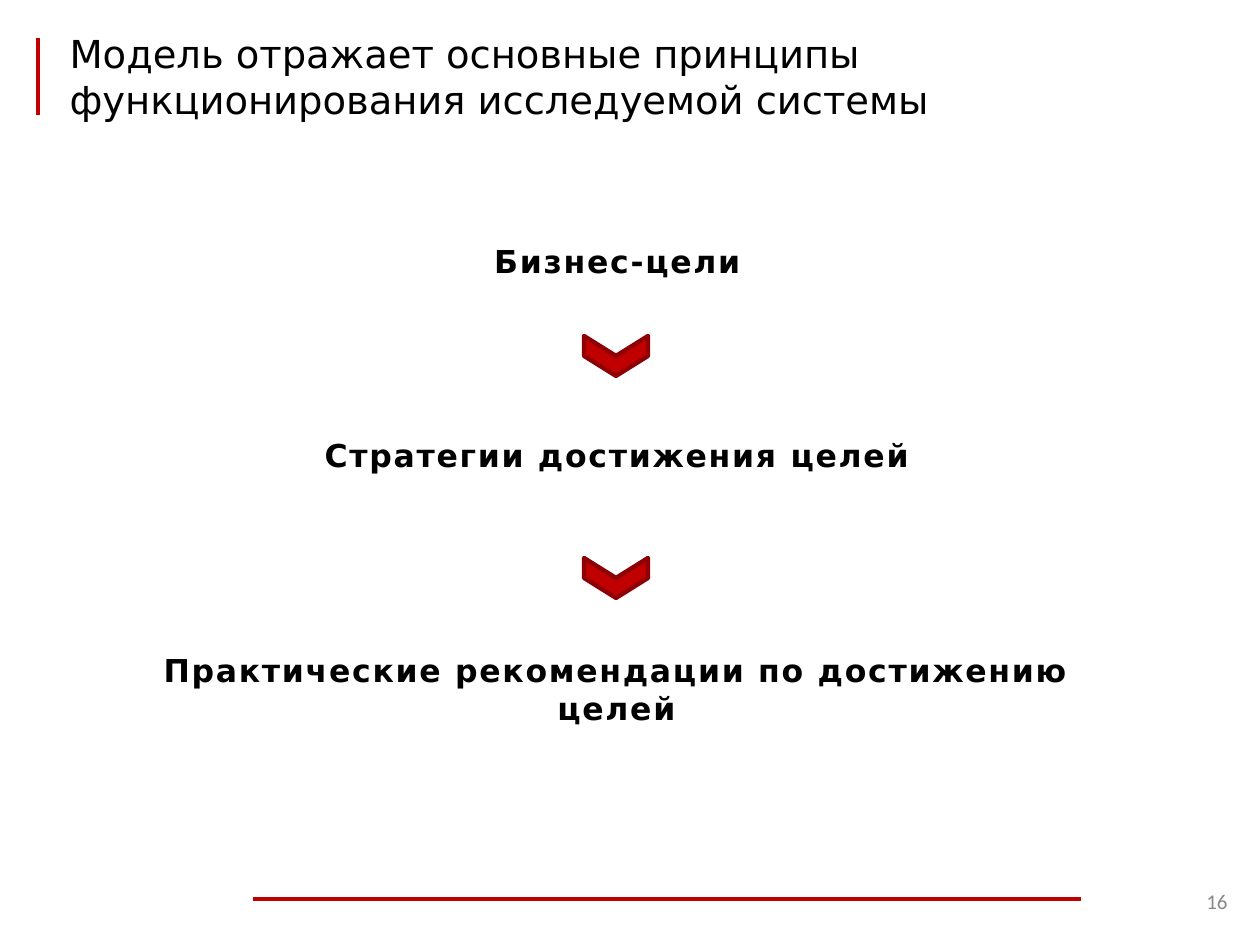
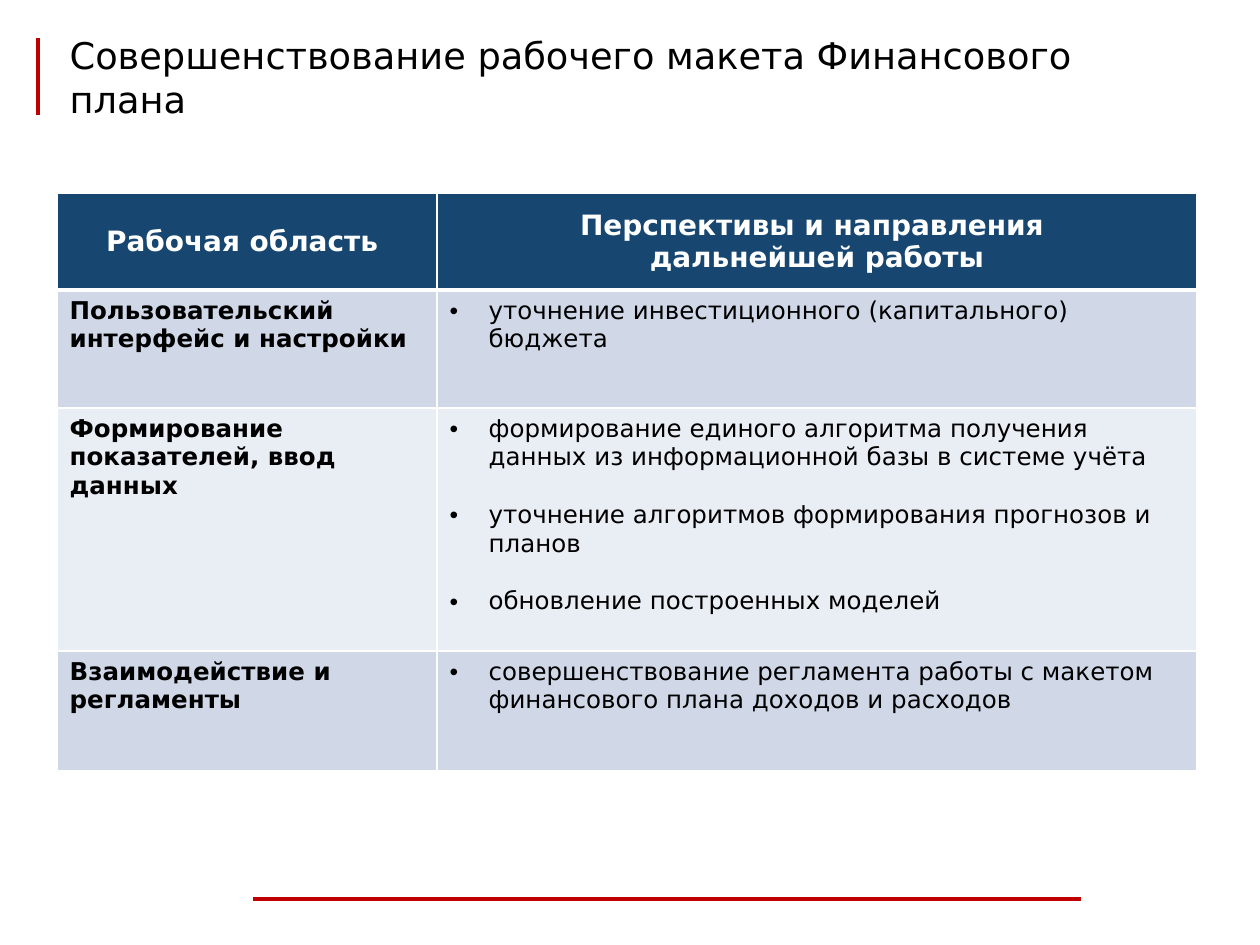
from dataclasses import dataclass

from lxml.etree import SubElement
from pptx import Presentation
from pptx.dml.color import RGBColor
from pptx.enum.shapes import MSO_CONNECTOR, MSO_SHAPE
from pptx.enum.text import MSO_ANCHOR, MSO_AUTO_SIZE, PP_ALIGN
from pptx.oxml.ns import qn
from pptx.util import Emu, Pt

# Shared look
SCALE = 914400 / 126
FONT = "DejaVu Sans"
RED, EDGE = "C00000", "8F0006"
BLACK, WHITE, GREY = "000000", "FFFFFF", "898989"
NAVY, BANDS = "174671", ("D0D8E8", "E9EDF4")


@dataclass
class Box:
    left: int
    top: int
    width: int
    height: int

    def emu(self) -> list[Emu]:
        return [px(n) for n in (self.left, self.top, self.width, self.height)]


@dataclass
class Style:
    size: float
    color: str = BLACK
    bold: bool = False
    font: str = FONT
    track: int = 0


@dataclass
class Step:
    text: str
    box: Box


@dataclass
class Row:
    area: str
    tasks: list[str]
    height: int


def px(count: int) -> Emu:
    return Emu(round(count * SCALE))


def color(code: str) -> RGBColor:
    return RGBColor.from_string(code)


# Text
def add_run(para, text: str, style: Style) -> None:
    run = para.add_run()
    run.text = text
    font = run.font
    font.name, font.size, font.bold = style.font, Pt(style.size), style.bold
    font.color.rgb = color(style.color)
    if style.track:
        font._element.set("spc", str(style.track * 100))


def fill_text(frame, lines: list[str], style: Style, align=PP_ALIGN.LEFT,
              gap: float = 0, bullet: bool = False) -> None:
    for i, line in enumerate(lines):
        para = frame.add_paragraph() if i else frame.paragraphs[0]
        para.alignment = align
        if i and gap:
            para.space_before = Pt(gap)
        if bullet:
            add_bullet(para)
        add_run(para, line, style)


def add_bullet(para) -> None:
    props = para._p.get_or_add_pPr()
    props.set("marL", str(px(39)))
    props.set("indent", str(-px(39)))
    SubElement(props, qn("a:buFont"), typeface="Arial")
    SubElement(props, qn("a:buChar"), char="•")


def add_label(slide, box: Box, text: str, style: Style, align, anchor) -> None:
    frame = slide.shapes.add_textbox(*box.emu()).text_frame
    frame.word_wrap = True
    frame.vertical_anchor = anchor
    fill_text(frame, [text], style, align)


# Frame of every slide
def add_rule(slide, x1: int, y1: int, x2: int, y2: int) -> None:
    ends = [px(n) for n in (x1, y1, x2, y2)]
    rule = slide.shapes.add_connector(MSO_CONNECTOR.STRAIGHT, *ends)
    rule.line.color.rgb = color(RED)
    rule.line.width = Pt(2.25)
    SubElement(rule._element.spPr, qn("a:effectLst"))


def add_slide(deck, title: str, size: int):
    slide = deck.slides.add_slide(deck.slide_layouts[5])
    add_rule(slide, 253, 899, 1081, 899)
    add_rule(slide, 38, 38, 38, 115)
    head = slide.shapes.title
    head.left, head.top, head.width, head.height = Box(57, 38, 1140, 77).emu()
    frame = head.text_frame
    frame.word_wrap = True
    frame.auto_size = MSO_AUTO_SIZE.NONE
    frame.vertical_anchor = MSO_ANCHOR.MIDDLE
    fill_text(frame, [title], Style(size))
    return slide


# Chain of steps
def add_arrow(slide, box: Box) -> None:
    arrow = slide.shapes.add_shape(MSO_SHAPE.CHEVRON, *box.emu())
    arrow.rotation = 90
    arrow.shadow.inherit = False
    arrow.fill.solid()
    arrow.fill.fore_color.rgb = color(RED)
    arrow.line.color.rgb = color(EDGE)
    arrow.line.width = Pt(2.5)


def draw_model(deck) -> None:
    slide = add_slide(deck, "Модель отражает основные принципы "
                      "функционирования исследуемой системы", 22)
    steps = [
        Step("Бизнес-цели", Box(333, 236, 569, 51)),
        Step("Стратегии достижения целей", Box(238, 430, 758, 51)),
        Step("Практические рекомендации по достижению целей",
             Box(112, 645, 1009, 90)),
    ]
    for step in steps:
        add_label(slide, step.box, step.text, Style(18, bold=True, track=1),
                  PP_ALIGN.CENTER, MSO_ANCHOR.TOP)
    for top in (324, 546):
        add_arrow(slide, Box(596, top, 40, 64))
    add_label(slide, Box(1182, 876, 58, 50), "16",
              Style(12, GREY, font="Calibri"), PP_ALIGN.RIGHT, MSO_ANCHOR.MIDDLE)


# Table of plans
def add_edge(cell, side: str, width: float) -> None:
    props = cell._tc.get_or_add_tcPr()
    edge = SubElement(props, qn(f"a:ln{side}"), w=str(Pt(width)))
    paint = SubElement(edge, qn("a:solidFill"))
    SubElement(paint, qn("a:srgbClr"), val=WHITE)


def paint_cell(cell, back: str, top: float, base: float) -> None:
    for side, width in (("L", 1), ("R", 1), ("T", top), ("B", base)):
        add_edge(cell, side, width)
    cell.fill.solid()
    cell.fill.fore_color.rgb = color(back)


def draw_plan(deck) -> None:
    slide = add_slide(
        deck, "Совершенствование рабочего макета Финансового плана", 21)
    heads = [["Рабочая область "],
             ["Перспективы и направления ", "дальнейшей работы"]]
    rows = [
        Row("Пользовательский интерфейс и настройки",
            ["уточнение инвестиционного (капитального) бюджета"], 118),
        Row("Формирование показателей, ввод данных",
            ["формирование единого алгоритма получения данных "
             "из информационной базы в системе учёта",
             "уточнение алгоритмов формирования прогнозов и планов",
             "обновление построенных моделей"], 243),
        Row("Взаимодействие и регламенты",
            ["совершенствование регламента работы с макетом "
             "финансового плана доходов и расходов"], 120),
    ]
    sizes = [97] + [row.height for row in rows]
    box = Box(57, 193, 1140, sum(sizes))
    grid = slide.shapes.add_table(len(sizes), 2, *box.emu()).table
    grid.horz_banding = False
    for col, width in zip(grid.columns, (380, 760)):
        col.width = px(width)
    for line, size in zip(grid.rows, sizes):
        line.height = px(size)

    for i, lines in enumerate(heads):
        cell = grid.cell(0, i)
        paint_cell(cell, NAVY, 1, 3)
        cell.vertical_anchor = MSO_ANCHOR.MIDDLE
        fill_text(cell.text_frame, lines, Style(16, WHITE, True),
                  PP_ALIGN.CENTER)
    for i, row in enumerate(rows):
        area, tasks = grid.cell(i + 1, 0), grid.cell(i + 1, 1)
        for cell in (area, tasks):
            paint_cell(cell, BANDS[i % 2], 1 if i else 3, 1)
        fill_text(area.text_frame, [row.area], Style(14, bold=True))
        fill_text(tasks.text_frame, row.tasks, Style(14), gap=16.5, bullet=True)


def main() -> None:
    deck = Presentation()
    deck.slide_width, deck.slide_height = px(1260), px(945)
    draw_model(deck)
    draw_plan(deck)
    deck.save("out.pptx")


if __name__ == "__main__":
    main()
